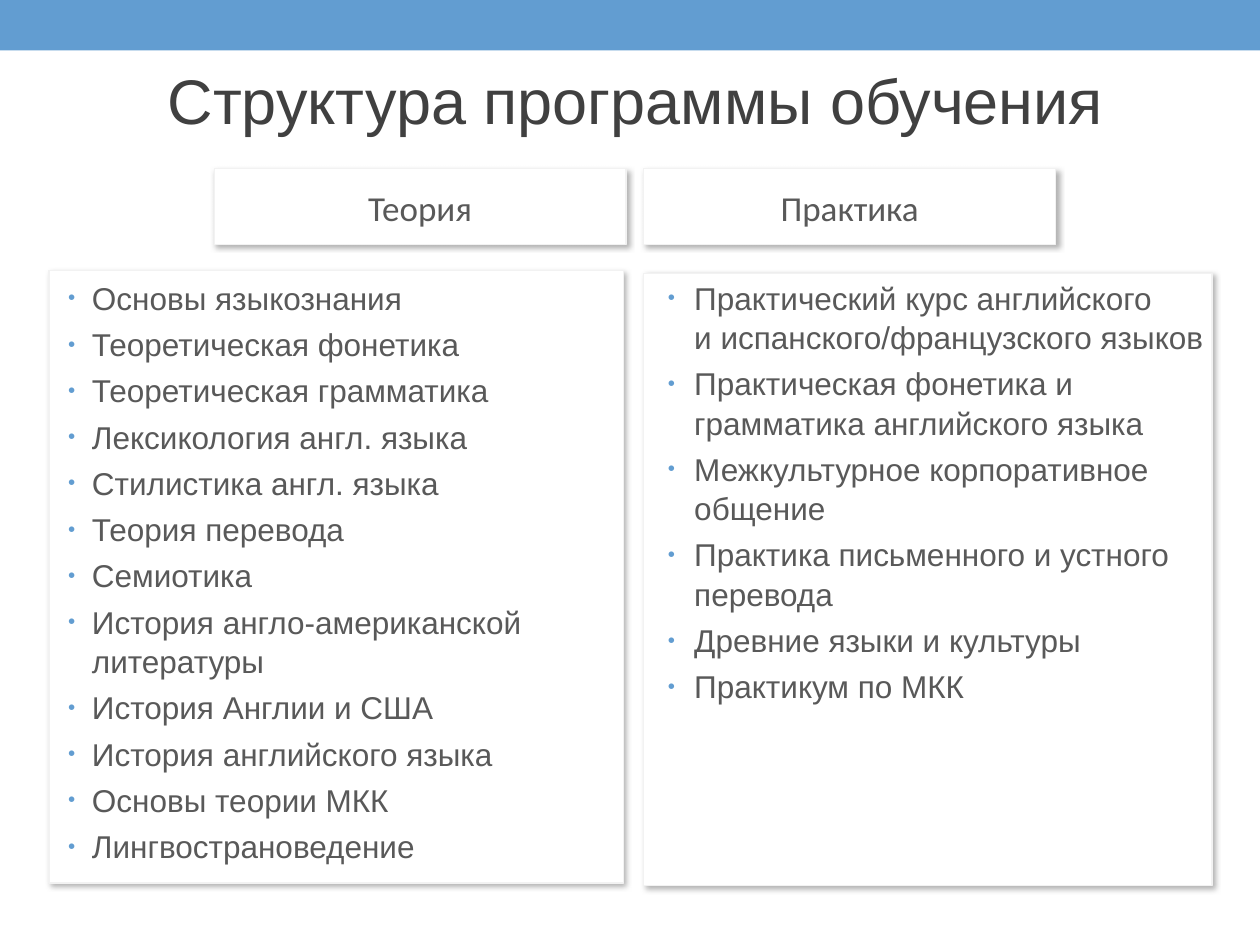
from dataclasses import dataclass

from lxml import etree
from pptx import Presentation
from pptx import util as u
from pptx.dml.color import RGBColor
from pptx.enum import shapes, text
from pptx.oxml.ns import qn


@dataclass(frozen=True)
class Theme:
    accent: str = "629DD1"
    title: str = "404040"
    body: str = "595959"
    card: str = "FFFFFF"
    edge: str = "F2F2F2"
    shadow: str = "808080"
    font: str = "Arial"
    label_font: str = "Calibri"
    title_size: int = 36
    label_size: int = 20
    body_size: int = 18


def node(parent, tag, **attrs):
    return etree.SubElement(parent, qn(tag), {k: str(v) for k, v in attrs.items()})


class Deck:
    """Style and current slide; lengths are in a grid of 100 columns and 75 rows."""

    COLS, ROWS = 100, 75
    TWO_CONTENT = 3

    def __init__(self, theme):
        self.theme = theme
        self.prs = Presentation()
        self.prs.slide_width, self.prs.slide_height = u.Inches(10), u.Inches(7.5)
        self.s = self.prs.slides.add_slide(self.prs.slide_layouts[self.TWO_CONTENT])

    def box(self, x, y, w, h):
        col, row = self.prs.slide_width / self.COLS, self.prs.slide_height / self.ROWS
        return [round(v) for v in (x * col, y * row, w * col, h * row)]

    def rect(self, box, fill, line=None, parent=None):
        sp = (parent or self.s).shapes.add_shape(
            shapes.MSO_SHAPE.RECTANGLE, *self.box(*box))
        sp.shadow.inherit = False
        sp.fill.solid()
        sp.fill.fore_color.rgb = RGBColor.from_string(fill)
        if line:
            sp.line.color.rgb = RGBColor.from_string(line)
            sp.line.width = u.Pt(0.75)
        else:
            sp.line.fill.background()
        return sp

    def card(self, box, parent=None):
        sp = self.rect(box, self.theme.card, self.theme.edge, parent)
        effects = sp._element.spPr.find(qn("a:effectLst"))
        shadow = node(effects, "a:outerShdw", blurRad=u.Pt(3), dist=u.Pt(2),
                      dir=45 * 60000, algn="tl", rotWithShape=0)
        color = node(shadow, "a:srgbClr", val=self.theme.shadow)
        node(color, "a:alpha", val=60000)

    def frame(self, sp, anchor=text.MSO_ANCHOR.TOP):
        tf = sp.text_frame
        tf.word_wrap = True
        tf.auto_size = text.MSO_AUTO_SIZE.NONE
        tf.vertical_anchor = anchor
        tf.margin_left = tf.margin_right = u.Inches(0.05)
        tf.margin_top = tf.margin_bottom = u.Inches(0.05)
        return tf

    def style(self, p, size, color, font, align):
        p.alignment = align
        for r in p.runs:
            r.font.size, r.font.name = u.Pt(size), font
            r.font.color.rgb = RGBColor.from_string(color)

    def place(self, idx, box):
        """Move a template placeholder to its box, in front of the cards."""
        sp = self.s.placeholders[idx]
        sp.left, sp.top, sp.width, sp.height = self.box(*box)
        self.s.shapes._spTree.append(sp._element)
        return sp

    def title(self, box, words):
        tf = self.frame(self.place(0, box))
        tf.text = words
        self.style(tf.paragraphs[0], self.theme.title_size, self.theme.title,
                   self.theme.font, text.PP_ALIGN.CENTER)

    def label(self, box, words):
        x, y, w, h = box
        group = self.s.shapes.add_group_shape()
        self.card(box, group)
        sp = group.shapes.add_textbox(*self.box(x, y + 1, w, h - 1.9))
        tf = self.frame(sp, text.MSO_ANCHOR.MIDDLE)
        tf.text = words
        self.style(tf.paragraphs[0], self.theme.label_size, self.theme.body,
                   self.theme.label_font, text.PP_ALIGN.CENTER)

    def bullets(self, idx, box, items, margin, hang):
        tf = self.frame(self.place(idx, box))
        for i, item in enumerate(items):
            p = tf.add_paragraph() if i else tf.paragraphs[0]
            p.text = item
            p.space_before, p.line_spacing = u.Pt(4), 1.04
            self.style(p, self.theme.body_size, self.theme.body,
                       self.theme.font, text.PP_ALIGN.LEFT)
            pPr = p._p.get_or_add_pPr()
            pPr.set("marL", str(u.Inches(margin)))
            pPr.set("indent", str(-u.Inches(hang)))
            node(node(pPr, "a:buClr"), "a:srgbClr", val=self.theme.accent)
            node(pPr, "a:buSzPct", val=65000)
            node(pPr, "a:buFont", typeface=self.theme.font)
            node(pPr, "a:buChar", char="•")


THEORY = [
    "Основы языкознания",
    "Теоретическая фонетика",
    "Теоретическая грамматика",
    "Лексикология англ. языка",
    "Стилистика англ. языка",
    "Теория перевода",
    "Семиотика",
    "История англо-американской литературы",
    "История Англии и США",
    "История английского языка",
    "Основы теории МКК",
    "Лингвострановедение",
]
PRACTICE = [
    "Практический курс английского\nи испанского/французского языков",
    "Практическая фонетика и грамматика английского языка",
    "Межкультурное корпоративное общение",
    "Практика письменного и устного перевода",
    "Древние языки и культуры",
    "Практикум по МКК",
]


def main():
    deck = Deck(Theme())

    # Top band and title
    deck.rect((0, 0, 100, 4), deck.theme.accent)
    deck.title((3.1, 4.4, 94.7, 7), "Структура программы обучения")

    # Column headings
    for x, words in ((17, "Теория"), (51.1, "Практика")):
        deck.label((x, 13.4, 32.7, 6), words)

    # Subject lists on their cards
    deck.card((3.9, 21.5, 45.6, 48.6))
    deck.bullets(1, (3.5, 21.5, 46.5, 48.7), THEORY, 0.33, 0.19)
    deck.card((51.1, 21.7, 45.1, 48.6))
    deck.bullets(2, (51.1, 21.5, 45.1, 48.7), PRACTICE, 0.35, 0.21)

    deck.prs.save("out.pptx")


if __name__ == "__main__":
    main()
